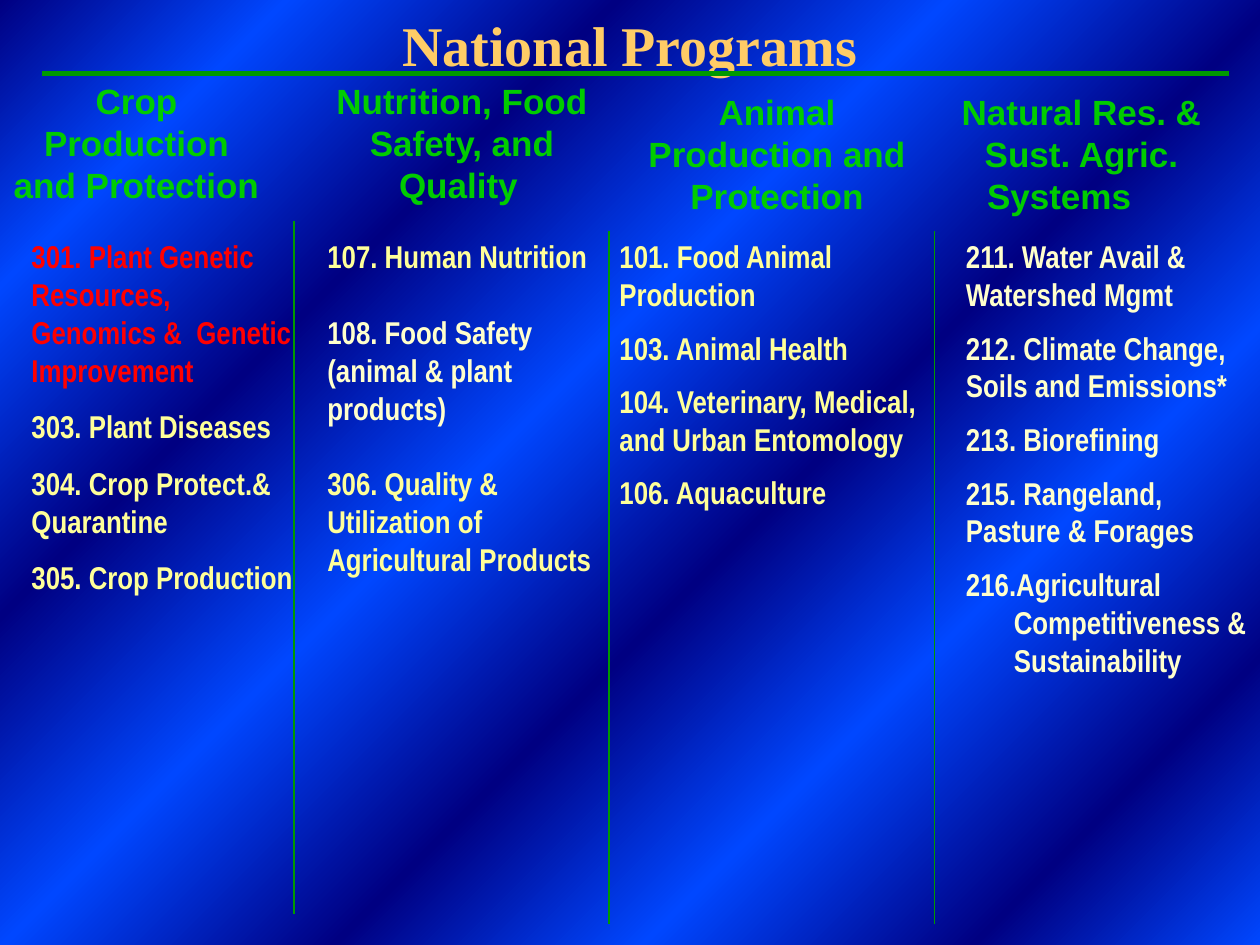
"""Build the National Programs slide: four columns of programs under headings."""
from lxml.etree import SubElement
from pptx import Presentation
from pptx.dml.color import RGBColor
from pptx.enum.shapes import MSO_CONNECTOR
from pptx.enum.text import MSO_ANCHOR, PP_ALIGN
from pptx.oxml.ns import qn
from pptx.util import Inches, Pt

COLORS = {"navy": "000082", "blue": "0047FF", "title": "FFCC66", "heading": "00CC00",
          "rule": "009900", "red": "FF0000", "yellow": "FFFF99", "cream": "FFFFCC"}
UNIT = Inches(1) / 12

prs = Presentation()
prs.slide_width, prs.slide_height = Inches(10), Inches(7.5)
s = prs.slides.add_slide(prs.slide_layouts[6])


def add_text(box, items, font, size, align=PP_ALIGN.LEFT, after=0, inset=0.1):
    sp = s.shapes.add_textbox(*[int(n * UNIT) for n in box])
    tf = sp.text_frame
    tf.word_wrap = True
    tf.margin_left = tf.margin_right = Inches(inset)
    for i, (text, color) in enumerate(items):
        p = tf.add_paragraph() if i else tf.paragraphs[0]
        p.text = text
        p.alignment = align
        p.space_after = Pt(after)
        r = p.runs[0]
        r.font.name, r.font.size, r.font.bold = font, Pt(size), True
        r.font.color.rgb = RGBColor.from_string(COLORS[color])
    return tf


def add_line(x1, y1, x2, y2, width):
    ends = [int(n * UNIT) for n in (x1, y1, x2, y2)]
    line = s.shapes.add_connector(MSO_CONNECTOR.STRAIGHT, *ends)
    line.line.color.rgb = RGBColor.from_string(COLORS["rule"])
    line.line.width = Pt(width)
    SubElement(line._element.spPr, qn("a:effectLst"))


fill = s.background.fill
fill.gradient()
fill.gradient_angle = 315
stops = s.element.find(".//" + qn("a:gsLst"))
for gs in list(stops):
    stops.remove(gs)
for i, pos in enumerate((0, 13, 28, 43, 58, 72, 87, 100)):
    gs = SubElement(stops, qn("a:gs"), pos=str(pos * 1000))
    SubElement(gs, qn("a:srgbClr"), val=COLORS["blue" if i % 2 else "navy"])

title = add_text((0, 2, 120, 6), [("National Programs", "title")],
                 "Times New Roman", 32, PP_ALIGN.CENTER)
title.vertical_anchor = MSO_ANCHOR.BOTTOM
add_line(117, 7, 4, 7, 3)

columns = [
    ("Crop Production and Protection", (0, 7, 26, 13), (3, 22, 25, 55), 10.8, 0, [
        ("301. Plant Genetic Resources, Genomics &  Genetic Improvement", "red"),
        ("303. Plant Diseases", "yellow"),
        ("304. Crop Protect.& Quarantine", "yellow"),
        ("305. Crop Production", "yellow")]),
    ("Nutrition, Food Safety, and Quality\t", (28, 7, 32, 13), (30, 22, 30, 34), 21.7, 0.1, [
        ("107. Human Nutrition", "yellow"),
        ("108. Food Safety (animal & plant products)", "cream"),
        ("306. Quality & Utilization of Agricultural Products", "yellow")]),
    ("Animal Production and Protection", (60, 8, 28, 13), (59, 22, 29, 55), 9, 0, [
        ("101. Food Animal Production", "yellow"),
        ("103. Animal Health", "yellow"),
        ("104. Veterinary, Medical, and Urban Entomology", "yellow"),
        ("106. Aquaculture", "yellow")]),
    ("Natural Res. & Sust. Agric. Systems\t", (89, 8, 28, 13), (92, 22, 28, 64), 9, 0, [
        ("211. Water Avail & Watershed Mgmt", "cream"),
        ("212. Climate Change, Soils and Emissions*", "cream"),
        ("213. Biorefining", "cream"),
        ("215. Rangeland, Pasture & Forages", "cream"),
        ("Agricultural Competitiveness & Sustainability", "cream")]),
]
for heading, head_box, body_box, after, inset, programs in columns:
    add_text(head_box, [(heading, "heading")], "Arial", 20, PP_ALIGN.CENTER)
    body = add_text(body_box, programs, "Arial Narrow", 18, after=after, inset=inset)

pPr = body.paragraphs[-1]._p.get_or_add_pPr()
pPr.set("marL", str(Inches(0.38)))
pPr.set("indent", str(-Inches(0.38)))
SubElement(pPr, qn("a:buAutoNum"), type="arabicPeriod", startAt="216")

for x, top in ((28, 21), (58, 22), (89, 22)):
    add_line(x, top, x, top + 66, 0.75)

prs.save("out.pptx")
